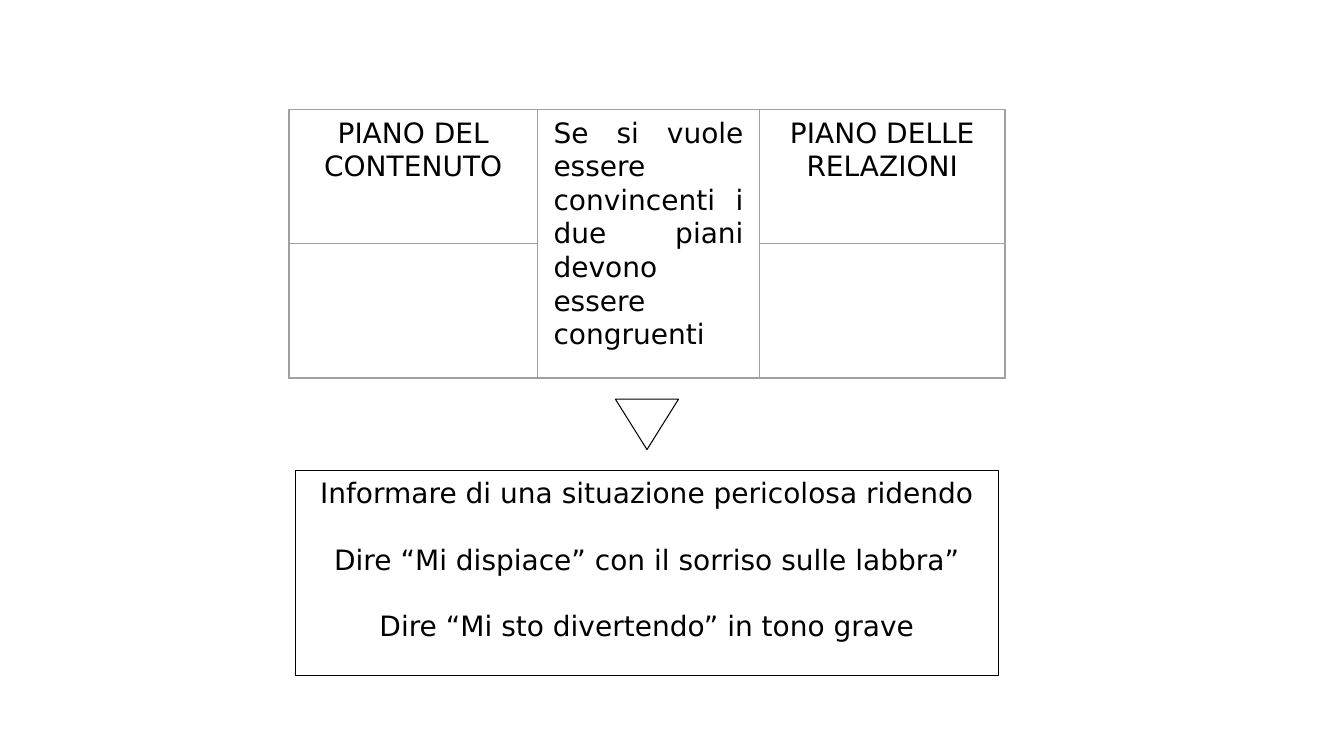
from pptx import Presentation
from pptx.dml.color import RGBColor
from pptx.enum.shapes import MSO_SHAPE
from pptx.enum.text import MSO_ANCHOR, PP_ALIGN
from pptx.util import Cm, Pt

CENTER, JUSTIFY = PP_ALIGN.CENTER, PP_ALIGN.JUSTIFY
TOP = MSO_ANCHOR.TOP
RECTANGLE, MERGE = MSO_SHAPE.RECTANGLE, MSO_SHAPE.FLOWCHART_MERGE

# Content: column, row, rows spanned, text, alignment
CELLS = [
    (0, 0, 1, "PIANO DEL CONTENUTO", CENTER),
    (1, 0, 2, "Se si vuole essere convincenti i due piani devono essere congruenti", JUSTIFY),
    (2, 0, 1, "PIANO DELLE RELAZIONI", CENTER),
    (0, 1, 1, "", CENTER),
    (2, 1, 1, "", CENTER),
]
EXAMPLES = [
    "Informare di una situazione pericolosa ridendo",
    "Dire “Mi dispiace” con il sorriso sulle labbra”",
    "Dire “Mi sto divertendo” in tono grave",
]

# Style and layout, lengths in centimetres
FONT, SIZE = "DejaVu Sans", 20
BLACK, WHITE, GREY = "000000", "FFFFFF", "A0A0A0"
COLUMNS = [6.25, 5.61, 6.17]
ROW_HEIGHT = 3.37
GRID_LEFT, GRID_TOP = 7.29, 2.77
GRID_WIDTH, GRID_HEIGHT = sum(COLUMNS), 2 * ROW_HEIGHT
MIDDLE = GRID_LEFT + GRID_WIDTH / 2
FRAME_GAP = 0.02
CELL_INSET, BOX_INSET = 0.41, 0.25


def color(value):
    return RGBColor.from_string(value)


def add_outlined(kind, left, top, width, height, line, fill=None):
    shape = page.shapes.add_shape(kind, Cm(left), Cm(top), Cm(width), Cm(height))
    shape.shadow.inherit = False
    if fill:
        shape.fill.solid()
        shape.fill.fore_color.rgb = color(fill)
    else:
        shape.fill.background()
    shape.line.color.rgb = color(line)
    shape.line.width = Pt(0.75)
    return shape


def write(shape, texts, align, inset):
    frame = shape.text_frame
    frame.word_wrap = True
    frame.vertical_anchor = TOP
    frame.margin_left = frame.margin_right = Cm(inset)
    frame.margin_top = frame.margin_bottom = Cm(0.13)
    for i, text in enumerate(texts):
        para = frame.add_paragraph() if i else frame.paragraphs[0]
        para.alignment = align
        if i:
            para.space_before = Pt(23.5)
        span = para.add_run()
        span.text = text
        span.font.name = FONT
        span.font.size = Pt(SIZE)
        span.font.color.rgb = color(BLACK)


deck = Presentation()
deck.slide_width, deck.slide_height = Cm(33.87), Cm(19.05)
page = deck.slides.add_slide(deck.slide_layouts[6])

# Grid of the two planes, with a tall middle cell
for column, row, rows, text, align in CELLS:
    cell = add_outlined(
        RECTANGLE, GRID_LEFT + sum(COLUMNS[:column]), GRID_TOP + row * ROW_HEIGHT,
        COLUMNS[column], rows * ROW_HEIGHT, GREY)
    if text:
        write(cell, [text], align, CELL_INSET)

# Frame around the grid
add_outlined(RECTANGLE, GRID_LEFT - FRAME_GAP, GRID_TOP - FRAME_GAP,
             GRID_WIDTH + 2 * FRAME_GAP, GRID_HEIGHT + 2 * FRAME_GAP, GREY)

# Triangle pointing down to the examples
add_outlined(MERGE, MIDDLE - 1.59 / 2, 10.06, 1.59, 1.27, BLACK, WHITE)

# Box of examples
box = add_outlined(RECTANGLE, MIDDLE - 17.73 / 2, 11.86, 17.73, 5.16, BLACK, WHITE)
write(box, EXAMPLES, CENTER, BOX_INSET)

deck.save("out.pptx")
